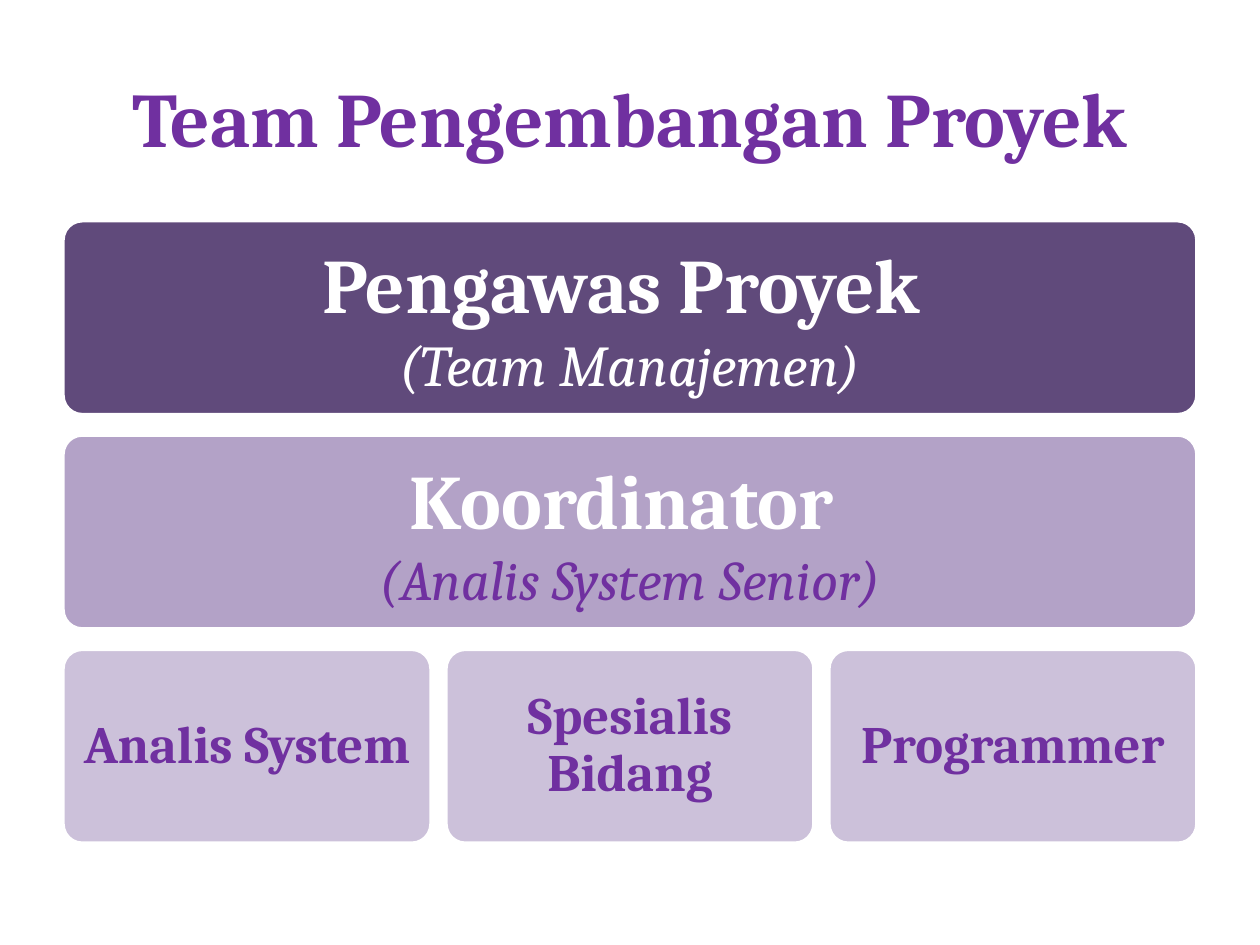
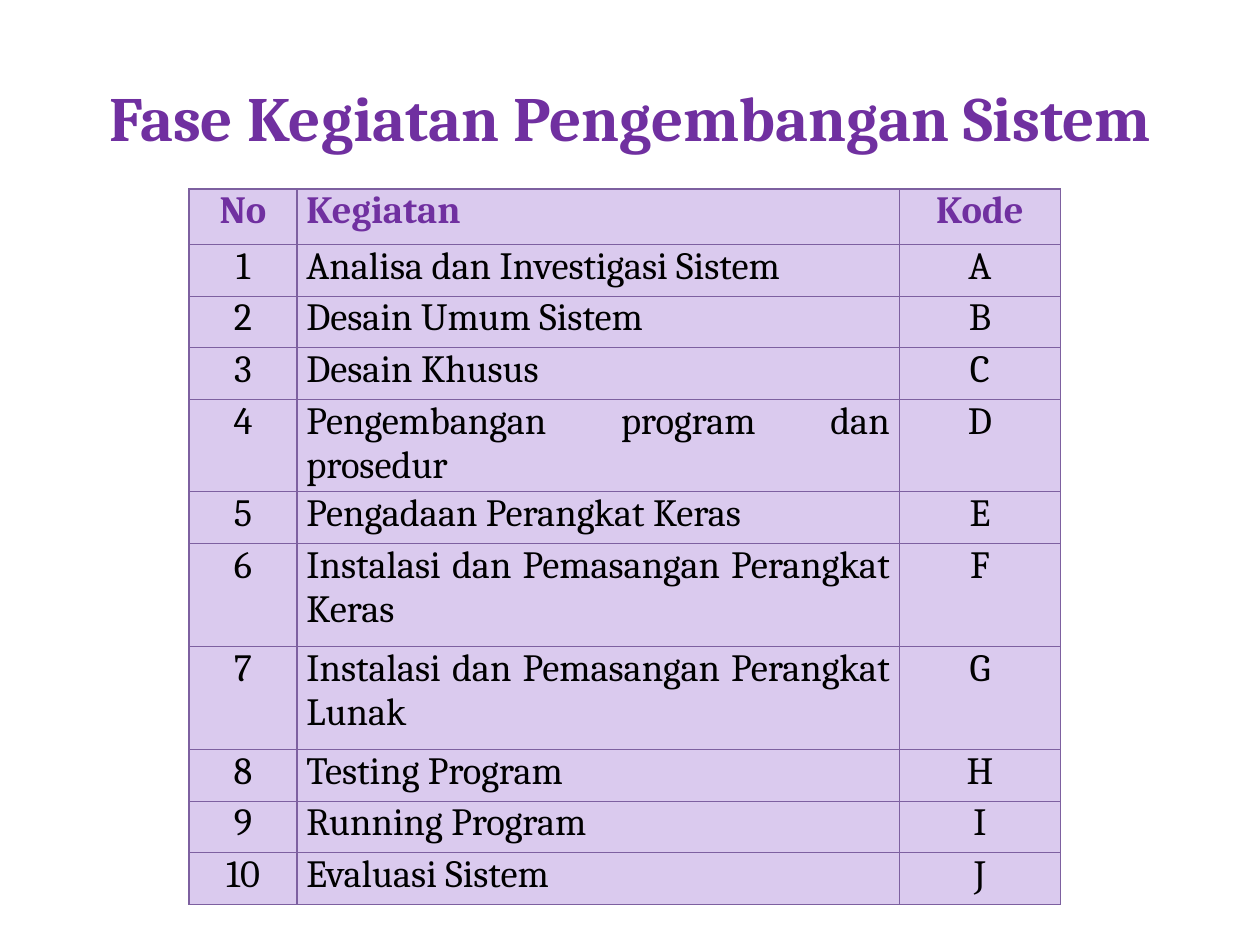
import dataclasses
import pptx
import pptx.dml.color
import pptx.enum.shapes
import pptx.enum.text
import pptx.oxml
import pptx.oxml.ns
import pptx.util

Cm = pptx.util.Cm
ALIGN = pptx.enum.text.PP_ALIGN
MIDDLE = pptx.enum.text.MSO_ANCHOR.MIDDLE


@dataclasses.dataclass(frozen=True)
class Theme:
    font: str = "Cambria"
    accent: str = "7030A0"
    white: str = "FFFFFF"
    black: str = "000000"
    supervisor: str = "604A7B"
    coordinator: str = "B3A2C7"
    member: str = "CCC1DA"
    cell: str = "DACAEE"
    border: str = "7D60A0"
    border_width: float = 0.75
    title_size: int = 44
    long_title_size: int = 36
    role_size: int = 44
    member_size: int = 30
    cell_size: int = 22


@dataclasses.dataclass(frozen=True)
class Box:
    left: float
    top: float
    width: float
    height: float

    def lengths(self):
        return [Cm(value) for value in dataclasses.astuple(self)]


THEME = Theme()
TITLE_BOX = Box(1.27, 0.76, 22.86, 3.18)
TEAM_BOX = Box(1.27, 4.45, 22.86, 12.55)
PHASE_BOX = Box(3.81, 3.81, 17.57, 13.64)

PHASES = [
    "Analisa dan Investigasi Sistem",
    "Desain Umum Sistem",
    "Desain Khusus",
    "Pengembangan program dan prosedur",
    "Pengadaan Perangkat Keras",
    "Instalasi dan Pemasangan Perangkat Keras",
    "Instalasi dan Pemasangan Perangkat Lunak",
    "Testing Program",
    "Running Program",
    "Evaluasi Sistem",
]


def rgb(value):
    return pptx.dml.color.RGBColor.from_string(value)


def write(paragraph, text, *, size, color, bold=False, italic=False,
          align=ALIGN.CENTER, line_spacing=None, before=None):
    paragraph.alignment = align
    if line_spacing is not None:
        paragraph.line_spacing = line_spacing
    if before is not None:
        paragraph.space_before = pptx.util.Pt(before)
    run = paragraph.add_run()
    run.text = text
    run.font.name = THEME.font
    run.font.size = pptx.util.Pt(size)
    run.font.color.rgb = rgb(color)
    run.font.bold = bold
    run.font.italic = italic


def add_title(slide, box, text, size):
    frame = slide.shapes.add_textbox(*box.lengths()).text_frame
    frame.word_wrap = True
    frame.vertical_anchor = MIDDLE
    write(frame.paragraphs[0], text, size=size, color=THEME.accent, bold=True)


def add_role(slide, box, fill, inset):
    role = slide.shapes.add_shape(
        pptx.enum.shapes.MSO_SHAPE.ROUNDED_RECTANGLE, *box.lengths())
    role.adjustments[0] = 0.1
    role.shadow.inherit = False
    role.fill.solid()
    role.fill.fore_color.rgb = rgb(fill)
    role.line.color.rgb = rgb(THEME.white)
    role.line.width = pptx.util.Pt(2)
    frame = role.text_frame
    frame.word_wrap = True
    frame.vertical_anchor = MIDDLE
    frame.margin_left = frame.margin_right = Cm(inset)
    frame.margin_top = frame.margin_bottom = Cm(inset)
    return frame


def add_team(slide, box):
    tier_gap, member_gap = 0.41, 0.3
    tier_height = (box.height - 2 * tier_gap) / 3
    tier_tops = [box.top + tier * (tier_height + tier_gap) for tier in range(3)]
    leaders = [
        ("Pengawas Proyek ", "(Team Manajemen)", THEME.supervisor, THEME.white, 33),
        ("Koordinator ", "(Analis System Senior)", THEME.coordinator, THEME.accent, 32),
    ]
    for top, (role, holder, fill, color, size) in zip(tier_tops, leaders):
        frame = add_role(slide, Box(box.left, top, box.width, tier_height), fill, 0.46)
        write(frame.paragraphs[0], role, size=THEME.role_size,
              color=THEME.white, bold=True)
        write(frame.add_paragraph(), holder, size=size, color=color, italic=True)

    members = ["Analis System", "Spesialis Bidang", "Programmer"]
    width = (box.width - member_gap * (len(members) - 1)) / len(members)
    for index, member in enumerate(members):
        left = box.left + index * (width + member_gap)
        frame = add_role(slide, Box(left, tier_tops[2], width, tier_height),
                         THEME.member, 0.3)
        write(frame.paragraphs[0], member, size=THEME.member_size,
              color=THEME.accent, bold=True, line_spacing=0.9)


def set_borders(cell):
    properties = cell._tc.get_or_add_tcPr()
    width = pptx.util.Pt(THEME.border_width)
    for position, side in enumerate(("lnL", "lnR", "lnT", "lnB")):
        properties.insert(position, pptx.oxml.parse_xml(
            f'<a:{side} {pptx.oxml.ns.nsdecls("a")} w="{width}"><a:solidFill>'
            f'<a:srgbClr val="{THEME.border}"/></a:solidFill></a:{side}>'))


def add_phases(slide, box):
    records = [("No", "Kegiatan", "Kode")]
    records += [(str(number), phase, code) for number, (phase, code)
                in enumerate(zip(PHASES, "ABCDEFGHIJ"), 1)]
    shares = (0.124, 0.691, 0.185)
    row_height, header_height = 1.04, 1.12
    table = slide.shapes.add_table(
        len(records), len(shares), *box.lengths()).table
    for column, share in zip(table.columns, shares):
        column.width = Cm(box.width * share)
    for number, record in enumerate(records):
        header = number == 0
        installation = record[1].startswith("Instalasi")
        table.rows[number].height = Cm(
            header_height if header else row_height * (1 + installation))
        for column, text in enumerate(record):
            cell = table.cell(number, column)
            cell.fill.solid()
            cell.fill.fore_color.rgb = rgb(THEME.cell)
            cell.margin_left = cell.margin_right = Cm(0.19)
            cell.margin_top = cell.margin_bottom = 0
            set_borders(cell)
            write(cell.text_frame.paragraphs[0], text, size=THEME.cell_size,
                  color=THEME.accent if header else THEME.black, bold=header,
                  align=ALIGN.JUSTIFY if column == 1 else ALIGN.CENTER, before=6)


def main():
    presentation = pptx.Presentation()
    presentation.slide_width = Cm(25.4)
    presentation.slide_height = Cm(19.05)
    blank = presentation.slide_layouts[6]

    team = presentation.slides.add_slide(blank)
    add_team(team, TEAM_BOX)
    add_title(team, TITLE_BOX, "Team Pengembangan Proyek", THEME.title_size)

    phases = presentation.slides.add_slide(blank)
    add_title(phases, TITLE_BOX, "Fase Kegiatan Pengembangan Sistem",
              THEME.long_title_size)
    add_phases(phases, PHASE_BOX)

    presentation.save("out.pptx")


if __name__ == "__main__":
    main()
